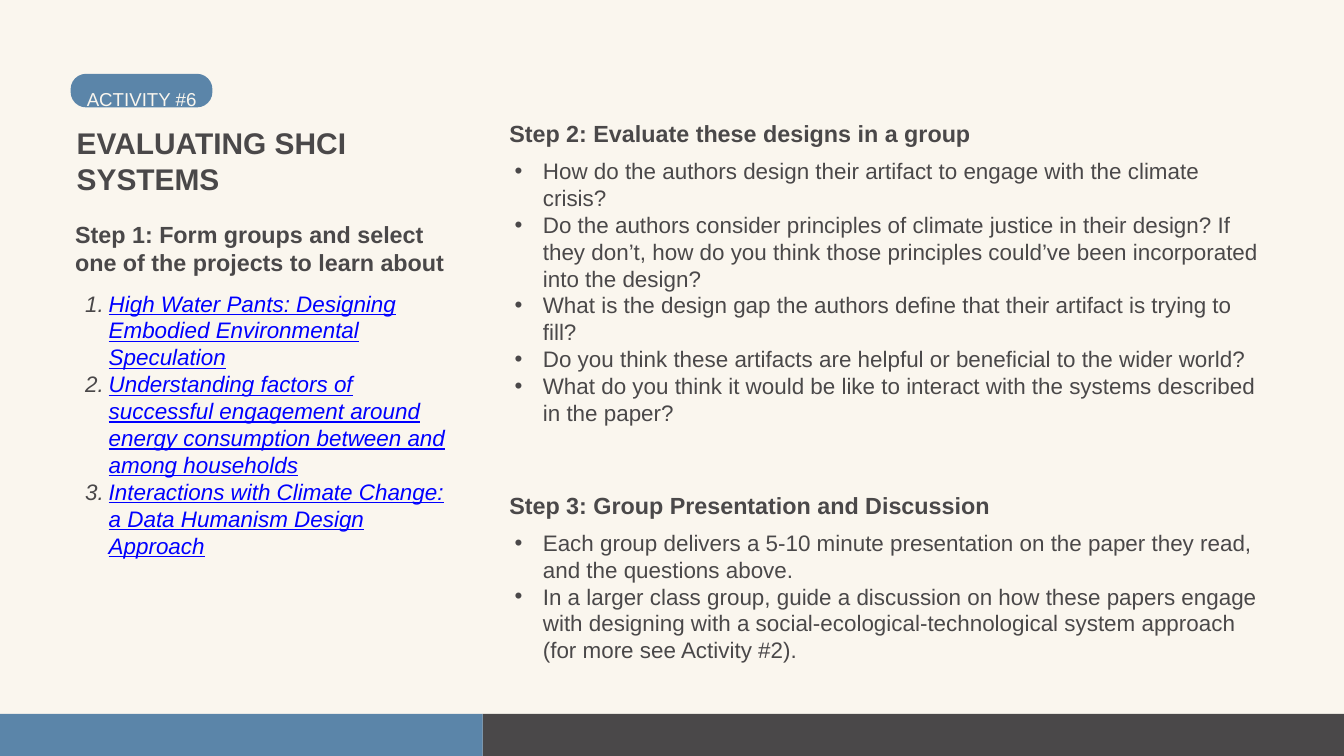
from lxml import etree
from pptx import Presentation
from pptx.dml.color import RGBColor
from pptx.enum.shapes import MSO_SHAPE
from pptx.enum.text import MSO_AUTO_SIZE
from pptx.oxml.ns import qn
from pptx.util import Cm, Pt

RECTANGLE = MSO_SHAPE.RECTANGLE
ROUNDED = MSO_SHAPE.ROUNDED_RECTANGLE
GROW = MSO_AUTO_SIZE.SHAPE_TO_FIT_TEXT

CREAM = RGBColor(0xFA, 0xF6, 0xEE)
CHARCOAL = RGBColor(0x4A, 0x48, 0x49)
STEEL = RGBColor(0x5B, 0x85, 0xA9)
LINK = RGBColor(0x00, 0x00, 0xFF)

FONT = "Arial"
LEADING = 1.2
LIST_INDENT = 1.27
LEFT_COLUMN = (2.84, 14.38)
RIGHT_COLUMN = (19.25, 28.32)

PROJECTS = [
    "High Water Pants: Designing Embodied Environmental Speculation",
    "Understanding factors of successful engagement around energy "
    "consumption between and among households",
    "Interactions with Climate Change: a Data Humanism Design Approach",
]
QUESTIONS = [
    "How do the authors design their artifact to engage with the climate crisis?",
    "Do the authors consider principles of climate justice in their design? "
    "If they don’t, how do you think those principles could’ve been "
    "incorporated into the design?",
    "What is the design gap the authors define that their artifact is trying to fill?",
    "Do you think these artifacts are helpful or beneficial to the wider world?",
    "What do you think it would be like to interact with the systems "
    "described in the paper?",
]
DISCUSSION = [
    "Each group delivers a 5-10 minute presentation on the paper they read, "
    "and the questions above.",
    "In a larger class group, guide a discussion on how these papers engage "
    "with designing with a social-ecological-technological system approach "
    "(for more see Activity #2).",
]


class SlideBuilder:
    def __init__(self, slide):
        self.slide = slide
        fill = slide.background.fill
        fill.solid()
        fill.fore_color.rgb = CREAM

    def block(self, kind, left, top, width, height, color):
        shape = self.slide.shapes.add_shape(
            kind, Cm(left), Cm(top), Cm(width), Cm(height))
        shape.shadow.inherit = False
        shape.fill.solid()
        shape.fill.fore_color.rgb = color
        shape.line.fill.background()
        return shape

    def text(self, lines, column, top, height, size, color=CHARCOAL,
             bold=False, spacing=None):
        left, width = column
        box = self.slide.shapes.add_textbox(
            Cm(left), Cm(top), Cm(width), Cm(height))
        frame = box.text_frame
        frame.word_wrap = True
        frame.auto_size = GROW
        frame.margin_left = frame.margin_right = 0
        frame.margin_top = frame.margin_bottom = 0
        frame.text = "\n".join(lines)
        for para in frame.paragraphs:
            para.line_spacing = spacing or Pt(size * LEADING)
            for span in para.runs:
                span.font.name = FONT
                span.font.size = Pt(size)
                span.font.bold = bold
                span.font.color.rgb = color
        return frame.paragraphs

    def heading(self, words, column, top, height):
        self.text([words], column, top, height, 25, bold=True)

    def marked_list(self, lines, column, top, height, hanging, tag, attributes,
                    color=CHARCOAL):
        paragraphs = self.text(lines, column, top, height, 24, color)
        for para in paragraphs:
            para.level = 1
            properties = para._p.get_or_add_pPr()
            properties.set("marL", str(Cm(LIST_INDENT)))
            properties.set("indent", str(-Cm(hanging)))
            marker_color = etree.SubElement(properties, qn("a:buClr"))
            etree.SubElement(marker_color, qn("a:srgbClr"), val=str(CHARCOAL))
            etree.SubElement(properties, qn("a:buFont"), typeface=FONT)
            etree.SubElement(properties, qn(tag), attributes)
        return paragraphs

    def bullets(self, lines, column, top, height):
        self.marked_list(lines, column, top, height, 1.07, "a:buChar", {"char": "•"})

    def linked_titles(self, lines, column, top, height):
        for para in self.marked_list(lines, column, top, height, 0.89, "a:buAutoNum",
                                     {"type": "arabicPeriod"}, LINK):
            for span in para.runs:
                span.font.italic = True
                span.font.underline = True


def main():
    deck = Presentation()
    deck.slide_width = Cm(50.8)
    deck.slide_height = Cm(28.575)
    page = SlideBuilder(deck.slides.add_slide(deck.slide_layouts[6]))

    page.block(RECTANGLE, 18.24, 26.98, 36.02, 1.59, CHARCOAL)
    page.block(RECTANGLE, -1.5, 26.98, 19.74, 1.59, STEEL)

    page.text(["EVALUATING SHCI SYSTEMS"], (2.9, 11.81), 4.7, 2.74, 32, bold=True)

    page.linked_titles(PROJECTS, LEFT_COLUMN, 10.95, 10.26)
    page.heading("Step 1: Form groups and select one of the projects to learn about",
                 LEFT_COLUMN, 8.33, 2.13)

    page.bullets(QUESTIONS, RIGHT_COLUMN, 5.94, 10.26)
    page.heading("Step 2: Evaluate these designs in a group", RIGHT_COLUMN, 4.52, 1.07)

    page.bullets(DISCUSSION, RIGHT_COLUMN, 19.99, 5.13)
    page.heading("Step 3: Group Presentation and Discussion", RIGHT_COLUMN, 18.57, 1.07)

    badge = page.block(ROUNDED, 2.67, 2.79, 5.36, 1.27, STEEL)
    badge.adjustments[0] = 0.46
    page.text(["ACTIVITY #6"], (3.28, 23.7), 3, 0.86, 20, CREAM, spacing=1.4)

    deck.save("out.pptx")


if __name__ == "__main__":
    main()
